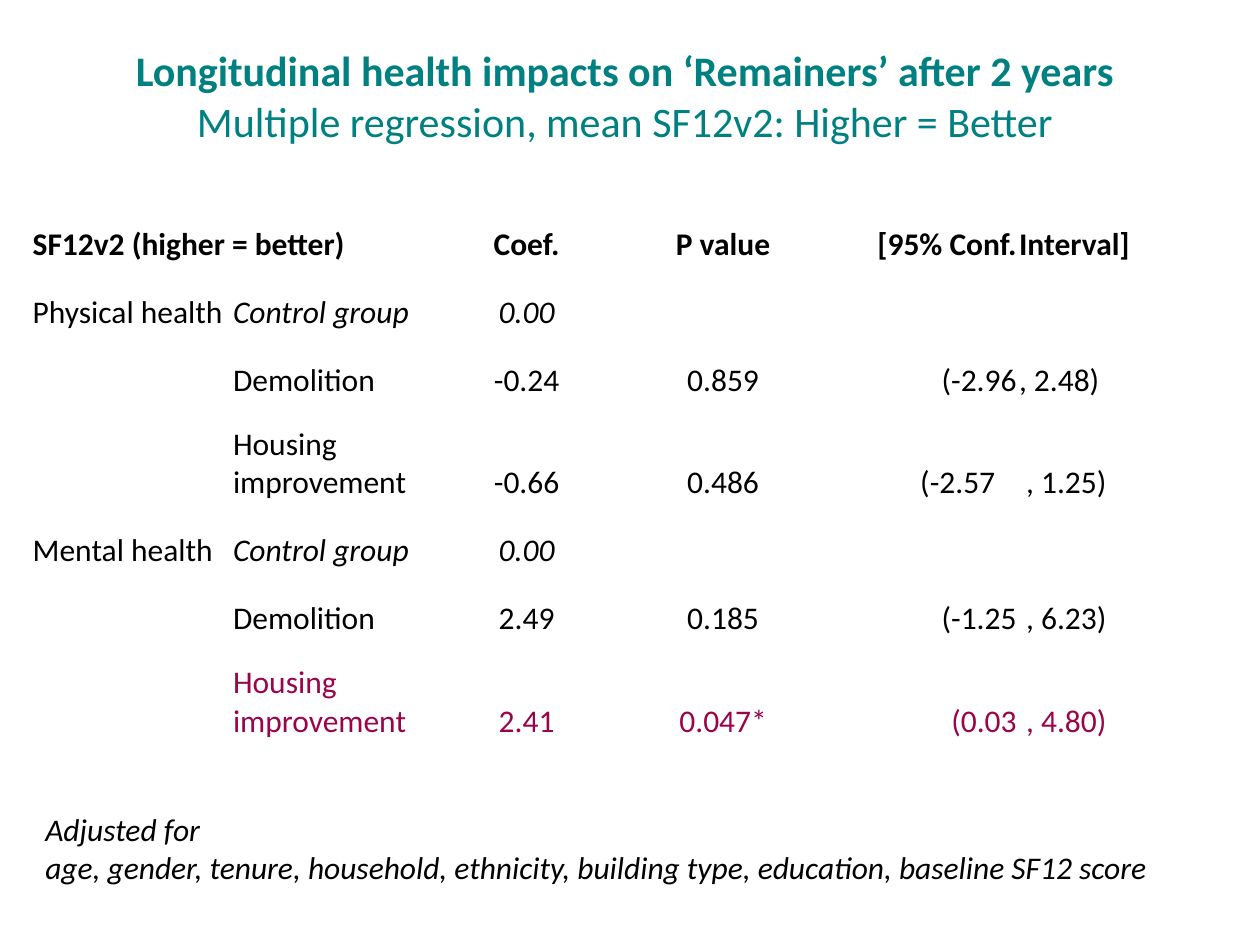
from dataclasses import dataclass

from pptx import Presentation
from pptx.dml.color import RGBColor
from pptx.enum.text import MSO_ANCHOR, PP_ALIGN
from pptx.util import Pt


@dataclass(frozen=True)
class Theme:
    font: str = "Calibri"
    title_size: float = 24
    body_size: float = 18
    teal: str = "008080"
    black: str = "000000"
    crimson: str = "9A044B"
    inset: float = 0.7
    plain_table: str = "{2D5ABB26-0587-4C30-8999-92F81FD0307C}"


THEME = Theme()

LEFT, CENTER, RIGHT = PP_ALIGN.LEFT, PP_ALIGN.CENTER, PP_ALIGN.RIGHT
COLUMN_ALIGNS = [LEFT, LEFT, CENTER, CENTER, RIGHT, LEFT]
HEADER = ["SF12v2 (higher = better)", "", "Coef.", "P value", "[95% Conf.", "Interval]"]
RESULTS = [
    ["Physical health", "Control group", "0.00", "", "", ""],
    ["", "Demolition", "-0.24", "0.859", "(-2.96", ", 2.48)"],
    ["", "Housing improvement", "-0.66", "0.486", "(-2.57", " , 1.25)"],
    ["Mental health", "Control group", "0.00", "", "", ""],
    ["", "Demolition", "2.49", "0.185", "(-1.25", " , 6.23)"],
    ["", "Housing improvement", "2.41", "0.047*", "(0.03", " , 4.80)"],
]


def write(para, text, size=THEME.body_size, color=THEME.black,
          bold=False, italic=False, align=LEFT):
    para.alignment = align
    span = para.add_run()
    span.text = text
    font = span.font
    font.name, font.size = THEME.font, Pt(size)
    font.bold, font.italic = bold, italic
    font.color.rgb = RGBColor.from_string(color)


def add_plain_table(page, box, widths, heights):
    """Add an unfilled, unruled table with bottom-anchored cells."""
    frame = page.shapes.add_table(len(heights), len(widths), *map(Pt, box))
    table = frame.table
    table.first_row = table.horz_banding = False
    table._tbl.tblPr[0].text = THEME.plain_table
    for column, width in zip(table.columns, widths):
        column.width = Pt(width)
    for row, height in zip(table.rows, heights):
        row.height = Pt(height)
    for cell in table.iter_cells():
        cell.fill.background()
        cell.vertical_anchor = MSO_ANCHOR.BOTTOM
        cell.margin_left = cell.margin_right = cell.margin_top = Pt(THEME.inset)
        cell.margin_bottom = Pt(0)
    return table


def add_title(page, box):
    frame = add_plain_table(page, box, [box[2]], [box[3]]).cell(0, 0).text_frame
    style = dict(size=THEME.title_size, color=THEME.teal, align=CENTER)
    write(frame.paragraphs[0], "Longitudinal health impacts on ‘Remainers’ after 2 years",
          bold=True, **style)
    write(frame.add_paragraph(), "Multiple regression, mean SF12v2: Higher = Better", **style)


def add_results(page, box):
    # Rows with a two-line label are half as tall again
    units = [1.5 if "Housing improvement" in row else 1 for row in [HEADER] + RESULTS]
    heights = [box[3] * unit / sum(units) for unit in units]
    first_width = 114.5
    widths = [first_width] + [(box[2] - first_width) / 5] * 5
    table = add_plain_table(page, box, widths, heights)
    table.cell(0, 0).merge(table.cell(0, 1))

    for row_index, row in enumerate([HEADER] + RESULTS):
        for column_index, text in enumerate(row):
            if not text:
                continue
            control = "Control group" in row and column_index > 0
            significant = "0.047*" in row
            write(table.cell(row_index, column_index).text_frame.paragraphs[0], text,
                  color=THEME.crimson if significant else THEME.black,
                  bold=row_index == 0, italic=control,
                  align=COLUMN_ALIGNS[column_index])

    # The lower bound for physical health after improvement sits further left
    table.cell(3, 4).margin_right = Pt(THEME.inset + 12.2)


def add_footnote(page, box):
    frame = add_plain_table(page, box, [box[2]], [box[3]]).cell(0, 0).text_frame
    write(frame.paragraphs[0], "Adjusted for", italic=True)
    write(frame.add_paragraph(),
          "age, gender, tenure, household, ethnicity, building type, education, "
          "baseline SF12 score", italic=True)


def main():
    deck = Presentation()
    deck.slide_width, deck.slide_height = Pt(720), Pt(540)
    page = deck.slides.add_slide(deck.slide_layouts[6])
    add_results(page, (18, 111.6, 676, 311.8))
    add_footnote(page, (25.2, 463, 674.6, 43.9))
    add_title(page, (31, 25.9, 652.3, 58.3))
    deck.save("out.pptx")


if __name__ == "__main__":
    main()
